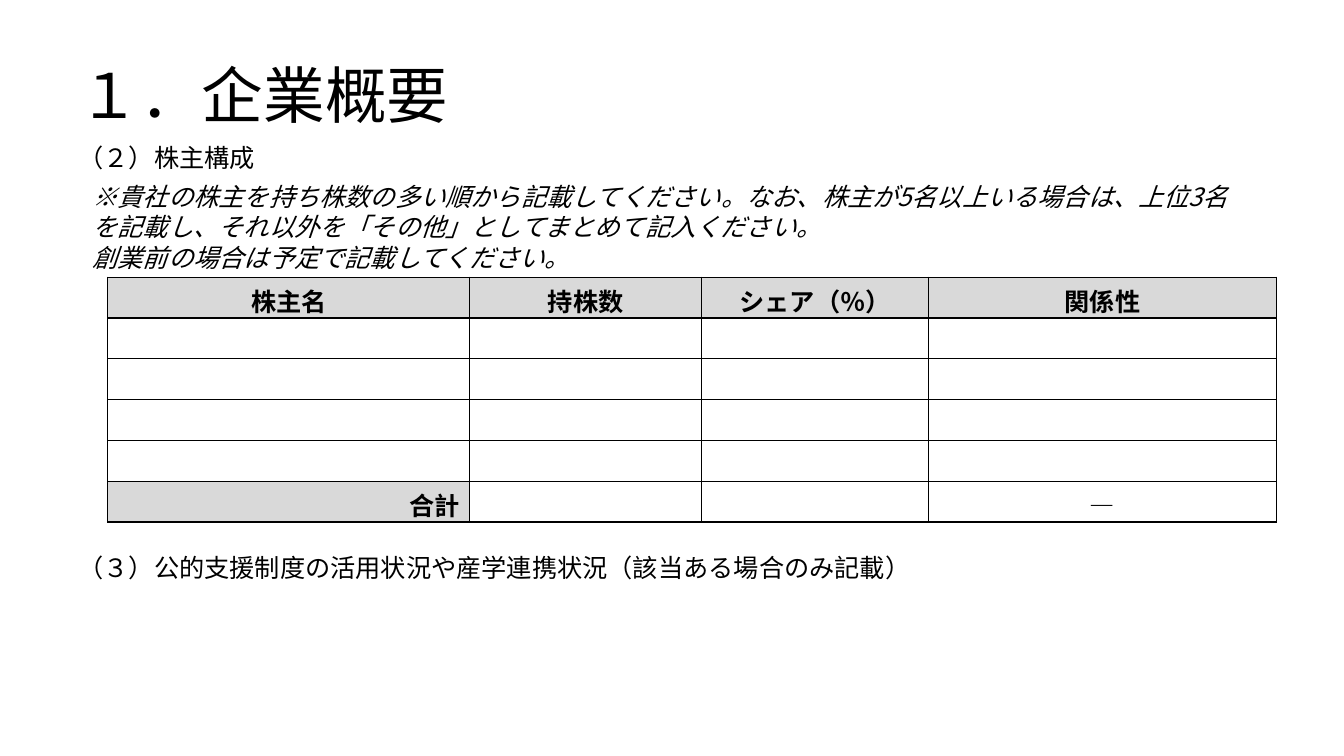
from dataclasses import dataclass

from lxml import etree
from pptx import Presentation
from pptx.dml.color import RGBColor
from pptx.enum import text
from pptx.oxml import ns
from pptx.util import Inches, Pt

HEADING = "１．企業概要"
PASSAGES = [
    (["（２）株主構成"], (0.68, 1.36, 11.5, 0.4), False),
    (
        [
            "※貴社の株主を持ち株数の多い順から記載してください。なお、株主が5名以上いる場合は、上位3名を記載し、それ以外を「その他」としてまとめて記入ください。",
            "創業前の場合は予定で記載してください。",
        ],
        (0.82, 1.75, 11.5, 1.01),
        True,
    ),
    (["（３）公的支援制度の活用状況や産学連携状況（該当ある場合のみ記載）"], (0.68, 5.43, 11.5, 0.4), False),
]
SHAREHOLDERS = [
    ["株主名", "持株数", "シェア（％）", "関係性"],
    *[[""] * 4 for _ in range(4)],
    ["合計", "", "", "―"],
]
COLUMN_WIDTHS = [3.59, 2.3, 2.25, 3.45]
ROW_HEIGHT = 0.405
TABLE_LEFT, TABLE_TOP = 1.07, 2.75


@dataclass(frozen=True)
class Theme:
    font: str = "Noto Sans CJK JP"
    ink: str = "000000"
    label_fill: str = "D9D9D9"
    blank_fill: str = "FFFFFF"
    title_size: int = 44
    body_size: int = 18
    border_width: int = 1


THEME = Theme()


def format_runs(paragraph, size, bold=False, italic=False):
    for run in paragraph.runs:
        font = run.font
        font.name, font.size = THEME.font, Pt(size)
        font.bold, font.italic = bold, italic
        font.color.rgb = RGBColor.from_string(THEME.ink)
        east_asian = etree.SubElement(run._r.get_or_add_rPr(), ns.qn("a:ea"))
        east_asian.set("typeface", THEME.font)


def add_passage(slide, lines, box, italic):
    frame = slide.shapes.add_textbox(*map(Inches, box)).text_frame
    frame.word_wrap = True
    frame.text = "\n".join(lines)
    for paragraph in frame.paragraphs:
        format_runs(paragraph, THEME.body_size, italic=italic)


def add_borders(cell):
    properties = cell._tc.get_or_add_tcPr()
    for side in ("lnL", "lnR", "lnT", "lnB"):
        line = etree.SubElement(properties, ns.qn(f"a:{side}"), w=str(Pt(THEME.border_width)))
        fill = etree.SubElement(line, ns.qn("a:solidFill"))
        etree.SubElement(fill, ns.qn("a:srgbClr"), val=THEME.ink)


def format_cell(cell, wording, is_label, alignment):
    cell.text = wording
    cell.margin_bottom = 0
    cell.vertical_anchor = text.MSO_ANCHOR.BOTTOM
    add_borders(cell)
    cell.fill.solid()
    cell.fill.fore_color.rgb = RGBColor.from_string(THEME.label_fill if is_label else THEME.blank_fill)
    paragraph = cell.text_frame.paragraphs[0]
    paragraph.alignment = alignment
    format_runs(paragraph, THEME.body_size, bold=is_label)


def add_shareholders(slide):
    row_count = len(SHAREHOLDERS)
    size = (sum(COLUMN_WIDTHS), ROW_HEIGHT * row_count)
    shareholders = slide.shapes.add_table(
        row_count, len(COLUMN_WIDTHS), *map(Inches, (TABLE_LEFT, TABLE_TOP, *size))
    ).table
    for column, width in zip(shareholders.columns, COLUMN_WIDTHS):
        column.width = Inches(width)
    for r, entries in enumerate(SHAREHOLDERS):
        shareholders.rows[r].height = Inches(ROW_HEIGHT)
        for c, wording in enumerate(entries):
            is_total = r == row_count - 1 and c == 0
            alignment = text.PP_ALIGN.RIGHT if is_total else text.PP_ALIGN.CENTER
            format_cell(shareholders.cell(r, c), wording, r == 0 or is_total, alignment)


def main():
    deck = Presentation()
    deck.slide_width, deck.slide_height = Inches(13.33), Inches(7.5)
    slide = deck.slides.add_slide(deck.slide_layouts[5])
    heading = slide.shapes.title
    heading.left, heading.top, heading.width, heading.height = map(Inches, (0.68, 0.25, 11.5, 1.45))
    heading.text_frame.text = HEADING
    heading.text_frame.vertical_anchor = text.MSO_ANCHOR.MIDDLE
    heading_line = heading.text_frame.paragraphs[0]
    heading_line.alignment = text.PP_ALIGN.LEFT
    heading_line.line_spacing = 0.9
    format_runs(heading_line, THEME.title_size)
    for lines, box, italic in PASSAGES:
        add_passage(slide, lines, box, italic)
    add_shareholders(slide)
    deck.save("out.pptx")


if __name__ == "__main__":
    main()
